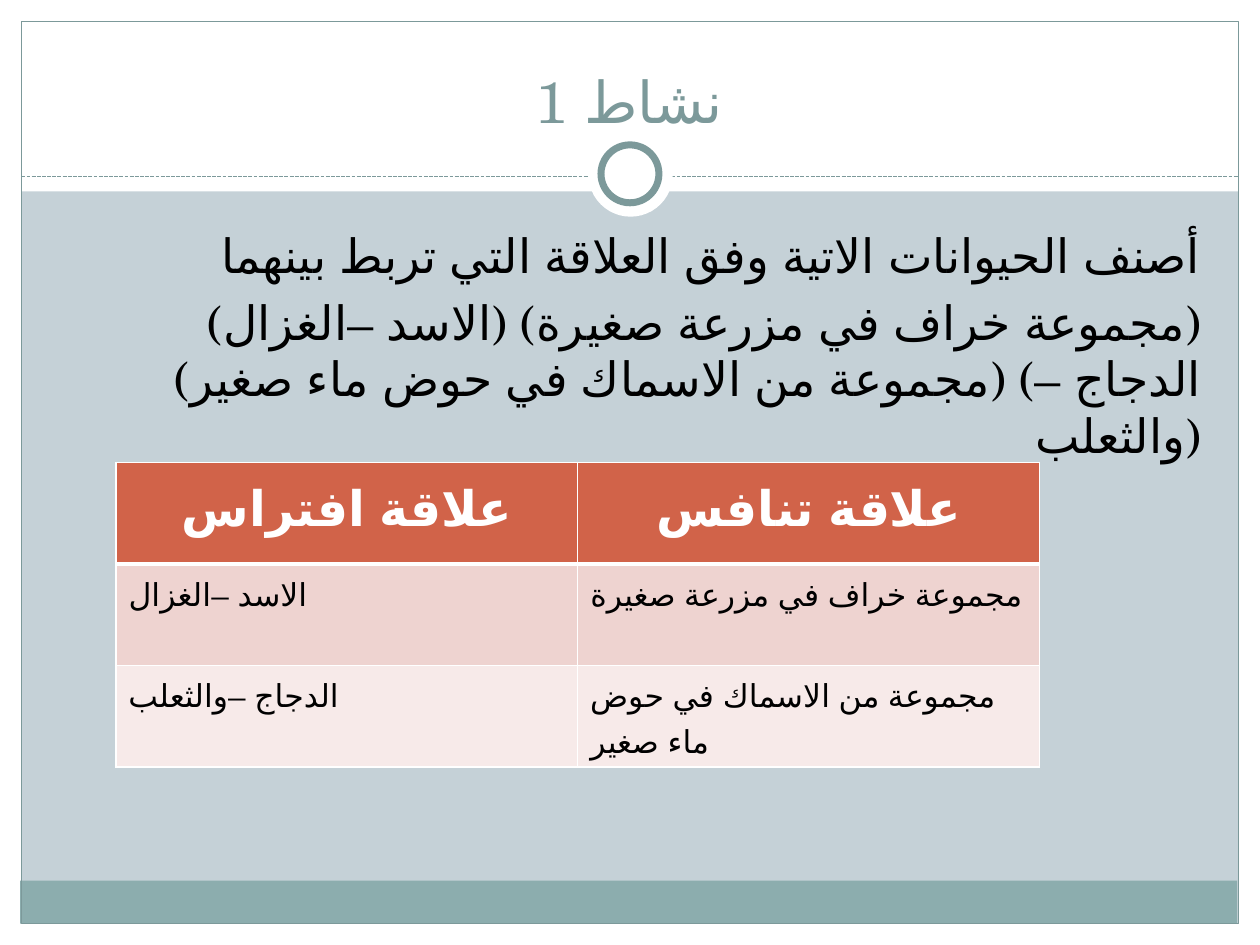
from dataclasses import dataclass

from lxml import etree
from pptx import Presentation
from pptx.dml.color import RGBColor
from pptx.enum.dml import MSO_LINE
from pptx.enum.shapes import MSO_CONNECTOR, MSO_SHAPE
from pptx.enum.text import MSO_ANCHOR, PP_ALIGN
from pptx.oxml.ns import qn
from pptx.util import Inches, Pt

RECT, OVAL = MSO_SHAPE.RECTANGLE, MSO_SHAPE.OVAL
LINE, DASH = MSO_CONNECTOR.STRAIGHT, MSO_LINE.SQUARE_DOT
LEFT, MID, RIGHT = PP_ALIGN.LEFT, PP_ALIGN.CENTER, PP_ALIGN.RIGHT
TOP, BOTTOM = MSO_ANCHOR.TOP, MSO_ANCHOR.BOTTOM


@dataclass(frozen=True)
class Theme:
    font: str = "TeX Gyre Schola"
    back: str = "C5D1D7"
    white: str = "FFFFFF"
    black: str = "000000"
    teal: str = "7C999A"
    band: str = "8CADAE"
    rows: tuple = ("D16349", "EED3D0", "F7EAE9")
    title: int = 33
    body: int = 27
    head: int = 28
    cell: int = 18


class Page:
    def __init__(self, deck, theme):
        self.theme = theme
        self.slide = deck.slides.add_slide(deck.slide_layouts[5])
        self.shapes = self.slide.shapes
        fill = self.slide.background.fill
        fill.solid()
        fill.fore_color.rgb = RGBColor.from_string(theme.back)

    def style(self, para, size, color, align, bold=False):
        para.alignment = align
        for run in para.runs:
            font = run.font
            font.name, font.size, font.bold = self.theme.font, Pt(size), bold
            font.color.rgb = RGBColor.from_string(color)
            # Arabic letters take the complex-script font
            props = run._r.get_or_add_rPr()
            props.set("lang", "ar-SA")
            etree.SubElement(props, qn("a:cs"), typeface=self.theme.font)

    def shape(self, kind, box, fill=None, line=None, width=0.75):
        item = self.shapes.add_shape(kind, *map(Inches, box))
        item.shadow.inherit = False
        if fill:
            item.fill.solid()
            item.fill.fore_color.rgb = RGBColor.from_string(fill)
        else:
            item.fill.background()
        if line:
            item.line.color.rgb = RGBColor.from_string(line)
            item.line.width = Pt(width)
        else:
            item.line.fill.background()

    def rule(self, start, end, color):
        item = self.shapes.add_connector(LINE, *map(Inches, start + end))
        item.line.color.rgb = RGBColor.from_string(color)
        item.line.width = Pt(0.75)
        item.line.dash_style = DASH
        etree.SubElement(item._element.spPr, qn("a:effectLst"))

    def title(self, text, box):
        item = self.shapes.title
        item.left, item.top, item.width, item.height = map(Inches, box)
        frame = item.text_frame
        frame.text = text
        frame.vertical_anchor = BOTTOM
        frame.margin_bottom = Inches(0.6)
        self.style(frame.paragraphs[0], self.theme.title, self.theme.teal, MID)
        # Bring the title in front of the white band
        self.shapes._spTree.append(item._element)

    def body(self, lines, box):
        frame = self.shapes.add_textbox(*map(Inches, box)).text_frame
        frame.word_wrap = True
        frame.text = "\n".join(lines)
        size = self.theme.body
        for i, para in enumerate(frame.paragraphs):
            props = para._p.get_or_add_pPr()
            props.set("marL", str(Inches(0.3)))
            props.set("indent", str(-Inches(0.3)))
            if i:
                para.space_before = Pt(size * 0.2)
            self.style(para, size, self.theme.black, RIGHT)

    def border(self, cell, sides):
        props = cell._tc.get_or_add_tcPr()
        for i, (side, width) in enumerate(sides.items()):
            line = etree.Element(qn(f"a:ln{side}"), w=str(Pt(width)))
            fill = etree.SubElement(line, qn("a:solidFill"))
            etree.SubElement(fill, qn("a:srgbClr"), val=self.theme.white)
            props.insert(i, line)

    def table(self, data, box):
        look = self.theme
        frame = self.shapes.add_table(len(data), len(data[0]), *map(Inches, box))
        grid = frame.table
        for r, row in enumerate(data):
            head = r == 0
            for c, text in enumerate(row):
                cell = grid.cell(r, c)
                cell.text = text
                cell.vertical_anchor = TOP
                cell.fill.solid()
                cell.fill.fore_color.rgb = RGBColor.from_string(look.rows[r])
                self.style(cell.text_frame.paragraphs[0],
                           look.head if head else look.cell,
                           look.white if head else look.black,
                           MID if head else LEFT, head)
                self.border(cell, {"L": 1, "R": 1, "T": 3 if r == 1 else 1,
                                   "B": 3 if head else 1})


def main():
    deck = Presentation()
    deck.slide_width, deck.slide_height = Inches(10), Inches(7.5)
    theme = Theme()
    page = Page(deck, theme)

    # White margins and top band
    for box in ((0, 7.33, 10, 0.17), (0, 0, 10, 1.52),
                (0, 0, 0.17, 7.5), (9.83, 0, 0.17, 7.5)):
        page.shape(RECT, box, theme.white)

    # Footer band, frame and dashed rule
    page.shape(RECT, (0.16, 6.99, 9.66, 0.34), theme.band)
    page.shape(RECT, (0.17, 0.17, 9.66, 7.16), line=theme.teal)
    page.rule((0.17, 1.4), (9.83, 1.4), theme.teal)

    # Ring on the rule
    page.shape(OVAL, (4.67, 1.05, 0.67, 0.67), theme.white)
    page.shape(OVAL, (4.77, 1.15, 0.46, 0.46), theme.white, theme.teal, 4)

    # Title and task
    page.title("نشاط 1", (0.33, 0.42, 9.33, 1.25))
    page.body((
        "أصنف الحيوانات الاتية وفق العلاقة التي تربط بينهما",
        "(الاسد –الغزال) (مجموعة خراف في مزرعة صغيرة) "
        "(مجموعة من الاسماك في حوض ماء صغير) (الدجاج –والثعلب)",
    ), (0.33, 1.75, 9.3, 4.92))

    # Answers
    page.table((
        ("علاقة افتراس", "علاقة تنافس"),
        ("الاسد –الغزال", "مجموعة خراف في مزرعة صغيرة"),
        ("الدجاج –والثعلب", "مجموعة من الاسماك في حوض ماء صغير"),
    ), (0.92, 3.67, 7.33, 2.42))

    deck.save("out.pptx")


if __name__ == "__main__":
    main()
